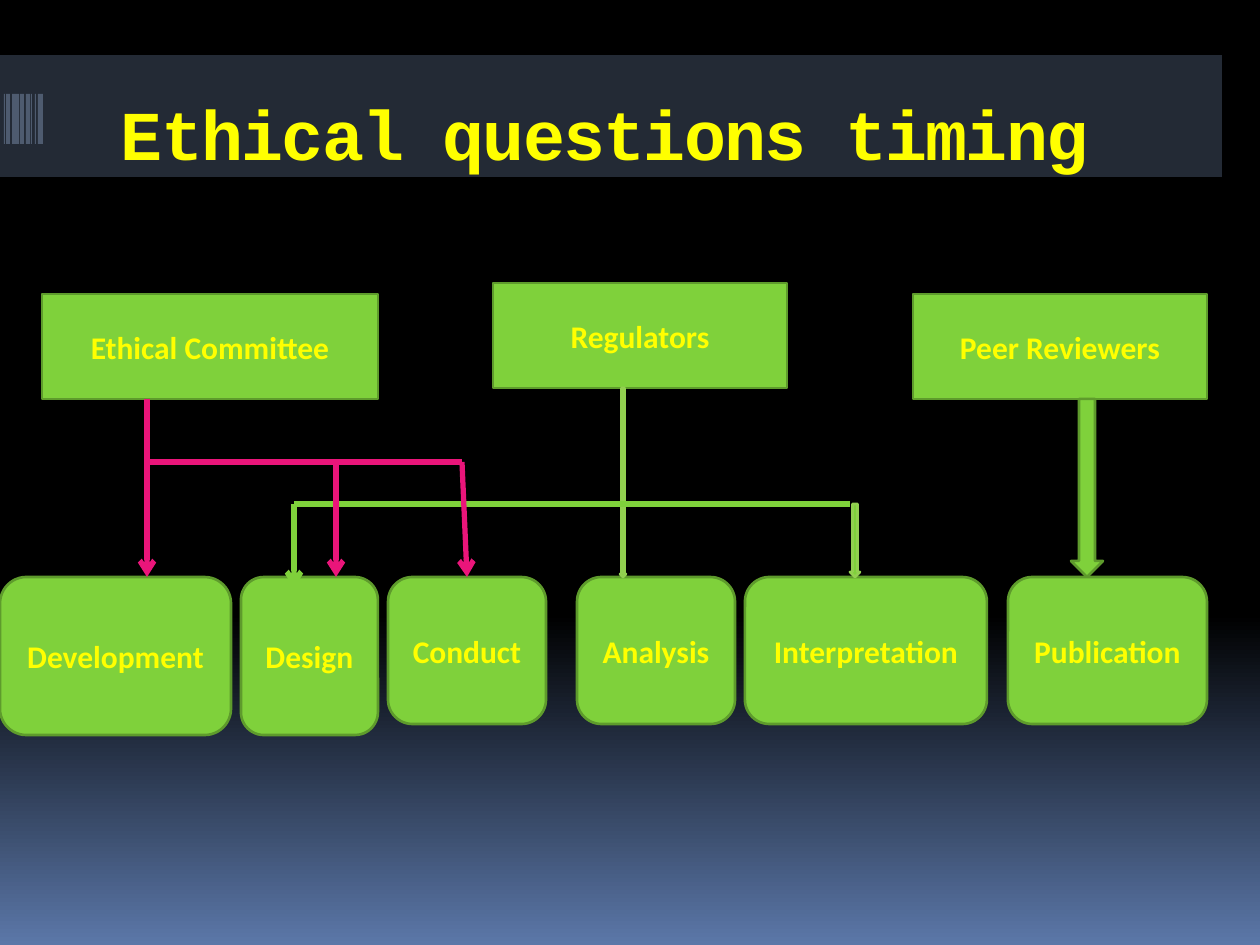
"""Build the slide on who raises ethical questions at each research stage."""
from lxml import etree
from pptx import Presentation
from pptx.dml.color import RGBColor
from pptx.enum.shapes import MSO_CONNECTOR, MSO_SHAPE
from pptx.enum.text import MSO_ANCHOR, PP_ALIGN
from pptx.oxml.ns import qn
from pptx.util import Emu, Pt

RECT, ARROW = MSO_SHAPE.RECTANGLE, MSO_SHAPE.DOWN_ARROW
ROUNDED = MSO_SHAPE.FLOWCHART_ALTERNATE_PROCESS
STRAIGHT = MSO_CONNECTOR.STRAIGHT
MIDDLE, CENTER = MSO_ANCHOR.MIDDLE, PP_ALIGN.CENTER
PX = 914400 / 126
GREEN, DARK_GREEN, LIME = "7FD13B", "5E9B2C", "92D050"
PINK, YELLOW, SLATE = "EA157A", "FFFF00", "4E5B6F"
color = RGBColor.from_string


def add_box(kind, bounds, fill, line=None):
    box = page.shapes.add_shape(kind, *[Emu(round(n * PX)) for n in bounds])
    box.shadow.inherit = False
    box.fill.solid()
    box.fill.fore_color.rgb = color(fill)
    if line:
        box.line.color.rgb = color(line)
        box.line.width = Pt(1.5)
    else:
        box.line.fill.background()
    return box


def write(box, text, font, size):
    frame = box.text_frame
    frame.word_wrap = True
    frame.vertical_anchor = MIDDLE
    frame.text = text
    para = frame.paragraphs[0]
    para.alignment = CENTER
    span = para.runs[0]
    span.font.name = font
    span.font.size = Pt(size)
    span.font.bold = True
    span.font.color.rgb = color(YELLOW)
    return span


deck = Presentation()
deck.slide_width, deck.slide_height = Emu(round(1260 * PX)), Emu(round(945 * PX))
page = deck.slides.add_slide(deck.slide_layouts[6])

backdrop = page.background.fill
backdrop.gradient()
backdrop.gradient_angle = 270
for stop, (position, shade) in zip(backdrop.gradient_stops, [(0.65, "000000"), (1, "5B77A8")]):
    stop.position = position
    stop.color.rgb = color(shade)

band = add_box(RECT, (0, 55, 1222, 122), "586A86")
band_color = next(band._element.spPr.iter(qn("a:srgbClr")))
etree.SubElement(band_color, qn("a:alpha")).set("val", "40000")

for left, width in [(4, 1), (6, 4), (12, 7), (20, 4), (26, 4), (31, 1), (35, 1), (38, 5)]:
    add_box(RECT, (left, 94, width, 50), SLATE)

title = page.shapes.add_textbox(*[Emu(round(n * PX)) for n in (69, 70, 1071, 126)])
title_span = write(title, "Ethical questions timing", "Courier New", 40)
title_span.font._element.set("spc", "-100")

for name, kind, *bounds in [
    ("Development", ROUNDED, 0, 577, 231, 158),
    ("Peer Reviewers", RECT, 913, 294, 294, 105),
    ("Regulators", RECT, 493, 283, 294, 105),
    ("Ethical Committee", RECT, 42, 294, 336, 105),
    ("Design", ROUNDED, 241, 577, 137, 158),
    ("Conduct", ROUNDED, 388, 577, 158, 147),
    ("Analysis", ROUNDED, 577, 577, 158, 147),
    ("Interpretation", ROUNDED, 745, 577, 242, 147),
    ("Publication", ROUNDED, 1008, 577, 199, 147),
]:
    write(add_box(kind, bounds, GREEN, DARK_GREEN), name, "Calibri", 18)

for line, *bounds in [
    (DARK_GREEN, 1071, 399, 32, 178),
    (LIME, 620, 388, 6, 189),
    (LIME, 850, 504, 10, 73),
]:
    add_box(ARROW, bounds, GREEN, line)

for shade, has_head, *ends in [
    (GREEN, False, 850, 504, 294, 504),
    (GREEN, True, 294, 504, 294, 588),
    (PINK, True, 147, 399, 147, 577),
    (PINK, False, 147, 462, 462, 462),
    (PINK, True, 462, 462, 467, 577),
    (PINK, True, 336, 462, 336, 577),
]:
    link = page.shapes.add_connector(STRAIGHT, *[Emu(round(n * PX)) for n in ends])
    link.line.color.rgb = color(shade)
    link.line.width = Pt(3)
    if has_head:
        etree.SubElement(link.line._get_or_add_ln(), qn("a:tailEnd")).set("type", "arrow")
    etree.SubElement(link._element.spPr, qn("a:effectLst"))

deck.save("out.pptx")
